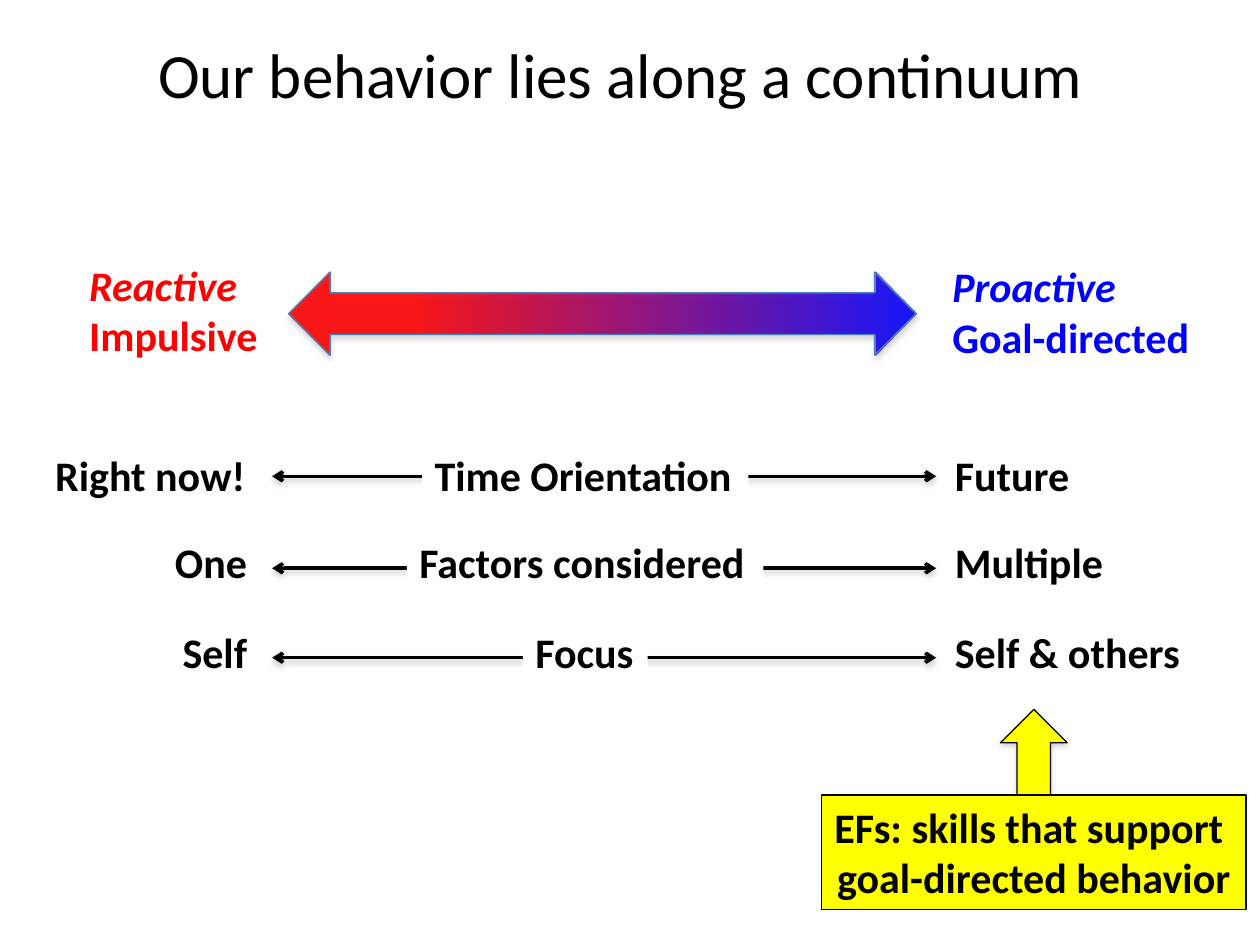
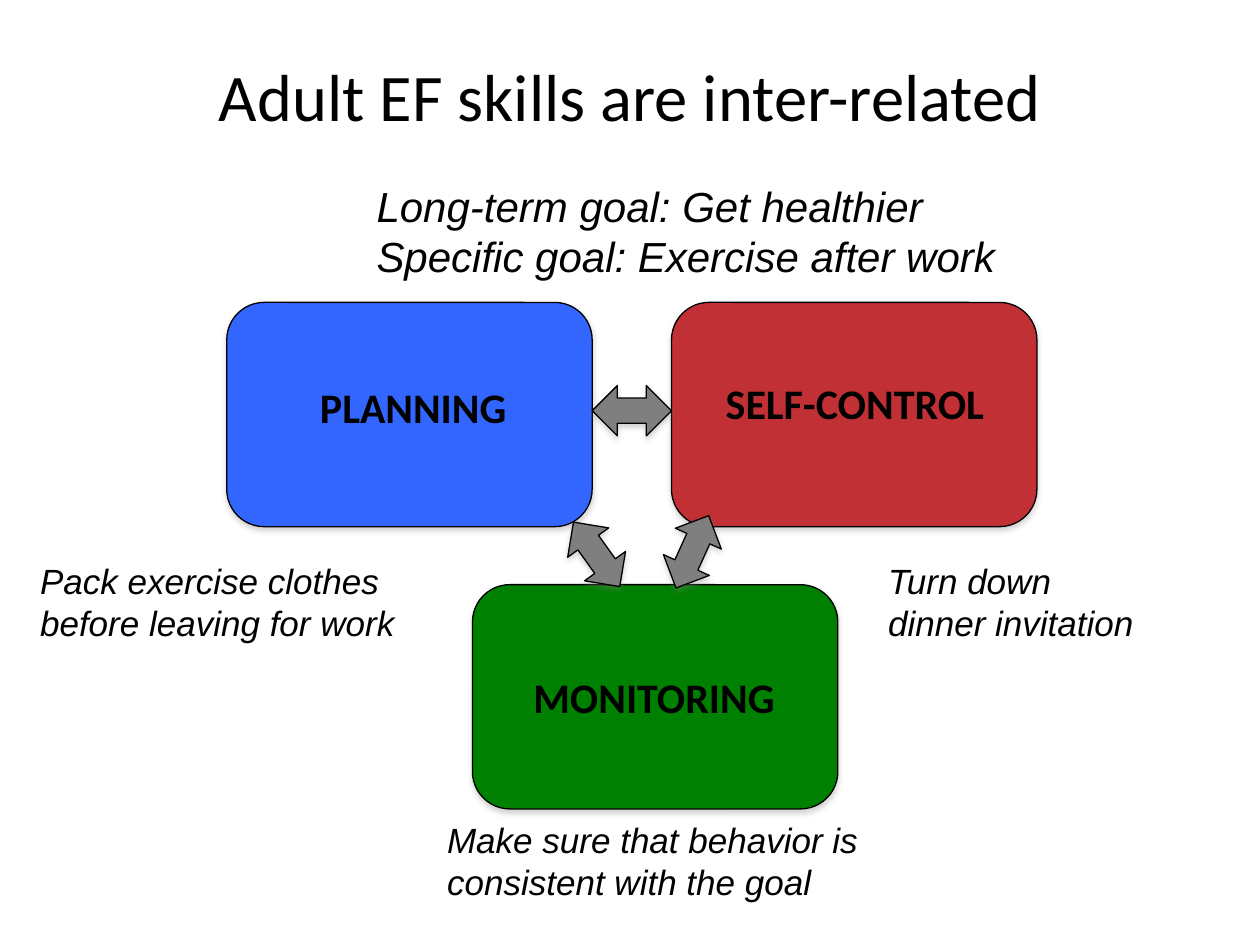
"""Build two slides on reactive versus proactive behavior and adult executive function skills."""
from dataclasses import dataclass

from pptx import Presentation
from pptx.dml.color import RGBColor
from pptx.enum.shapes import MSO_CONNECTOR, MSO_SHAPE as Shape
from pptx.enum.text import MSO_ANCHOR, MSO_AUTO_SIZE, PP_ALIGN as Align
from pptx.oxml import parse_xml
from pptx.oxml.ns import nsdecls
from pptx.util import Inches, Pt


@dataclass(frozen=True)
class Theme:
    heading_font: str = "Calibri"
    example_font: str = "Arial"
    label_size: int = 24
    example_size: int = 20
    edge_width: float = 0.75
    black: str = "000000"
    white: str = "FFFFFF"
    reactive: str = "FF0000"
    proactive: str = "0000FF"
    continuum_edge: str = "4A7EBB"
    highlight: str = "FFFF00"
    planning: str = "3366FF"
    self_control: str = "C03035"
    monitoring: str = "008000"
    link: str = "7F7F7F"
    shadow: str = "808080"


theme = Theme()
rgb = RGBColor.from_string


def add_label(slide, text, box, color=theme.black, font=theme.heading_font,
              size=theme.label_size, bold=True, italic=False,
              align=Align.LEFT, wrap=False, fill=None):
    label = slide.shapes.add_textbox(*map(Inches, box))
    frame = label.text_frame
    frame.text = text
    frame.word_wrap = wrap
    frame.auto_size = MSO_AUTO_SIZE.SHAPE_TO_FIT_TEXT
    if fill:
        label.fill.solid()
        label.fill.fore_color.rgb = rgb(fill)
    for paragraph in frame.paragraphs:
        paragraph.alignment = align
        for run in paragraph.runs:
            run.font.name, run.font.size = font, Pt(size)
            run.font.bold, run.font.italic = bold, italic
            run.font.color.rgb = rgb(color)
    return label


def finish(figure, fill=None, edge=theme.black, width=theme.edge_width, arrows=False):
    if fill:
        figure.fill.solid()
        figure.fill.fore_color.rgb = rgb(fill)
    figure.line.color.rgb = rgb(edge)
    figure.line.width = Pt(width)
    properties = figure._element.spPr
    if arrows:
        for end in ("headEnd", "tailEnd"):
            figure.line._get_or_add_ln().append(
                parse_xml(f'<a:{end} {nsdecls("a")} type="arrow"/>'))
    properties.append(parse_xml(
        f'<a:effectLst {nsdecls("a")}>'
        f'<a:outerShdw blurRad="{Pt(3.1)}" dist="{Pt(1.8)}" dir="5400000" rotWithShape="0">'
        f'<a:srgbClr val="{theme.shadow}"><a:alpha val="35000"/></a:srgbClr>'
        '</a:outerShdw></a:effectLst>'))


deck = Presentation()
deck.slide_width, deck.slide_height = Inches(10), Inches(7.5)

slides = []
for heading, box, size in (
    ("Our behavior lies along a continuum", (-0.76, 0, 11.37, 1.17), 36),
    ("Adult EF skills are inter-related", (0.5, 0.13, 9, 1.25), 38),
):
    slide = deck.slides.add_slide(deck.slide_layouts[5])
    title = slide.shapes.title
    title.left, title.top, title.width, title.height = map(Inches, box)
    title.text_frame.text = heading
    title.text_frame.vertical_anchor = MSO_ANCHOR.MIDDLE
    title.text_frame.paragraphs[0].alignment = Align.CENTER
    title_font = title.text_frame.paragraphs[0].runs[0].font
    title_font.name, title_font.size = theme.heading_font, Pt(size)
    title_font.color.rgb = rgb(theme.black)
    slides.append(slide)
continuum, skills = slides

span = continuum.shapes.add_shape(
    Shape.LEFT_RIGHT_ARROW, *map(Inches, (2.29, 2.16, 4.98, 0.66)))
span.fill.gradient()
span.fill.gradient_angle = 0
stops = span.fill._fill._gradFill.gsLst
for stop in list(stops):
    stops.remove(stop)
for percent, color in ((0, theme.reactive), (19, theme.reactive), (100, theme.proactive)):
    stops.append(parse_xml(
        f'<a:gs {nsdecls("a")} pos="{percent * 1000}">'
        f'<a:srgbClr val="{color}"><a:alpha val="89000"/></a:srgbClr></a:gs>'))
finish(span, edge=theme.continuum_edge)

for text, box, color, wrap in (
    ("Reactive\nImpulsive", (0.61, 2.01, 1.57, 0.91), theme.reactive, False),
    ("Proactive\nGoal-directed", (7.46, 2.02, 2.87, 0.91), theme.proactive, True),
):
    pole = add_label(continuum, text, box, color, wrap=wrap)
    pole.text_frame.paragraphs[0].runs[0].font.italic = True

label_height = 0.5
reactive_right, proactive_left, dimension_center = 2.07, 7.48, 4.645
for top, line_y, reactive, reactive_width, dimension, dimension_width, proactive, proactive_width in (
    (3.52, 3.78, "Right now!", 1.73, "Time Orientation", 2.59, "Future", 1.12),
    (4.21, 4.51, "One", 0.78, "Factors considered", 2.83, "Multiple", 1.39),
    (4.92, 5.22, "Self", 0.72, "Focus", 0.99, "Self & others", 2.01),
):
    scale = continuum.shapes.add_connector(
        MSO_CONNECTOR.STRAIGHT, *map(Inches, (2.16, line_y, 7.43, line_y)))
    finish(scale, width=2, arrows=True)
    for text, left, width, fill in (
        (reactive, reactive_right - reactive_width, reactive_width, None),
        (dimension, dimension_center - dimension_width / 2, dimension_width, theme.white),
        (proactive, proactive_left, proactive_width, None),
    ):
        add_label(continuum, text, (left, top, width, label_height), fill=fill)

support_arrow = continuum.shapes.add_shape(
    Shape.UP_ARROW, *map(Inches, (7.94, 5.63, 0.53, 0.68)))
finish(support_arrow, theme.highlight)
support_note = add_label(
    continuum, "EFs: skills that support \ngoal-directed behavior", (6.52, 6.31, 3.37, 0.91),
    align=Align.CENTER, wrap=True, fill=theme.highlight)
support_note.line.color.rgb = rgb(theme.black)
support_note.line.width = Pt(theme.edge_width)

for left, top, color in (
    (1.8, 2.4, theme.planning),
    (5.33, 2.4, theme.self_control),
    (3.75, 4.64, theme.monitoring),
):
    skill = skills.shapes.add_shape(
        Shape.ROUNDED_RECTANGLE, *map(Inches, (left, top, 2.9, 1.78)))
    finish(skill, color)

for left, top, angle in ((4.7, 3.06, 0), (5.18, 4.18, 114.4), (4.42, 4.2, 54.4)):
    link = skills.shapes.add_shape(
        Shape.LEFT_RIGHT_ARROW, *map(Inches, (left, top, 0.63, 0.4)))
    link.rotation = angle
    finish(link, theme.link)

for name, box, wrap in (
    ("PLANNING", (2.43, 2.98, 1.7, 0.51), False),
    ("MONITORING", (4.12, 5.28, 2.14, 0.51), False),
    ("SELF-CONTROL", (5.43, 2.95, 2.71, 0.51), True),
):
    add_label(skills, name, box, align=Align.CENTER, wrap=wrap)

for text, box, size, wrap in (
    ("Long-term goal: Get healthier\nSpecific goal: Exercise after work",
     (2.89, 1.38, 5.24, 0.91), theme.label_size, False),
    ("Pack exercise clothes before leaving for work",
     (0.22, 4.39, 3.54, 0.77), theme.example_size, True),
    ("Turn down dinner invitation",
     (6.95, 4.39, 2.32, 0.77), theme.example_size, True),
    ("Make sure that behavior is consistent with the goal",
     (3.45, 6.45, 4.17, 0.77), theme.example_size, True),
):
    add_label(skills, text, box, font=theme.example_font, size=size,
              bold=False, italic=True, wrap=wrap)

deck.save("out.pptx")
